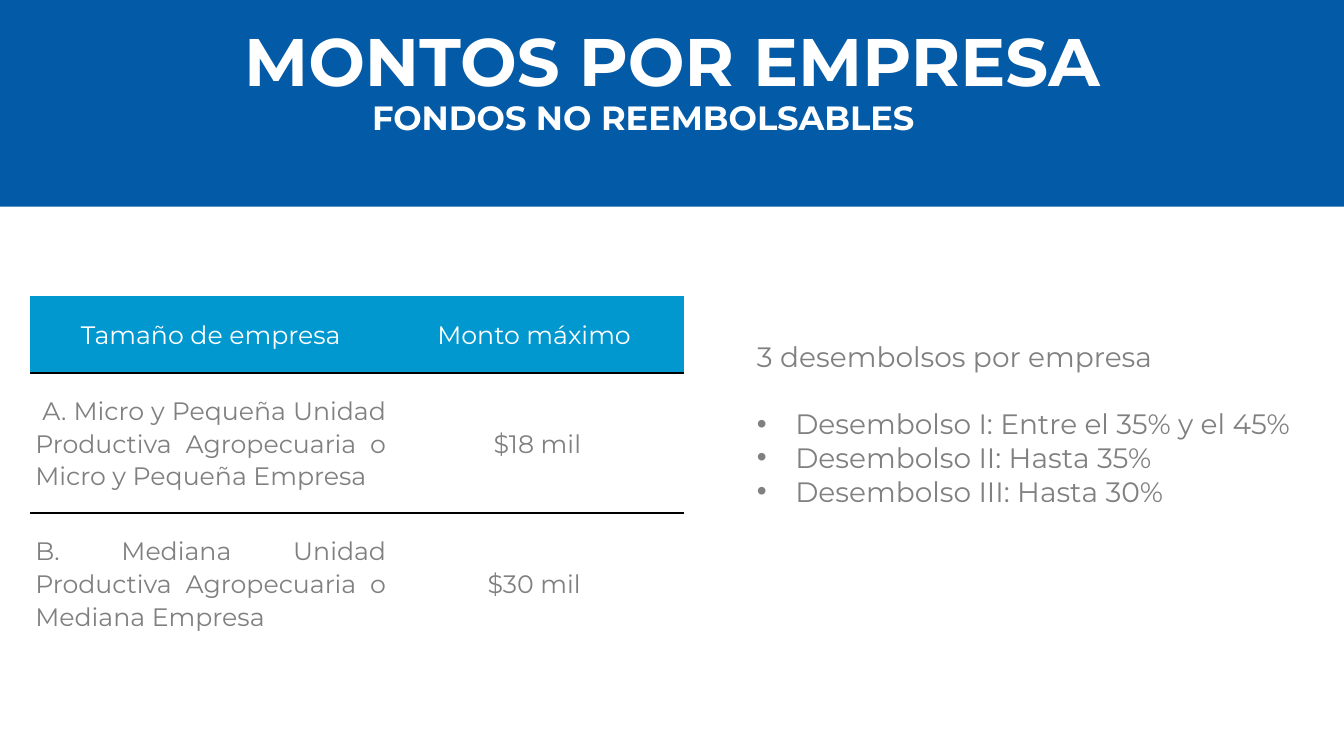
from lxml import etree
from pptx import Presentation
from pptx.dml.color import RGBColor
from pptx.enum.shapes import MSO_SHAPE
from pptx.enum.text import MSO_ANCHOR as ANCHOR, PP_ALIGN as ALIGN
from pptx.oxml.ns import qn
from pptx.util import Inches, Pt

# Content
TITLE = "MONTOS POR EMPRESA"
SUBTITLE = "FONDOS NO REEMBOLSABLES"
AMOUNTS = [
    ("Tamaño de empresa", "Monto máximo "),
    (" A. Micro y Pequeña Unidad Productiva Agropecuaria o Micro y Pequeña Empresa",
     "$18 mil"),
    ("B. Mediana Unidad Productiva Agropecuaria o Mediana Empresa", "$30 mil "),
]
PAYMENTS_HEAD = "3 desembolsos por empresa"
PAYMENTS = [
    "Desembolso I: Entre el 35% y el 45%",
    "Desembolso II: Hasta 35%",
    "Desembolso III: Hasta 30%",
]

# Style and grid
FONT = "Montserrat"
COLORS = {"band": "035AA6", "header": "0098CF", "white": "FFFFFF",
          "body": "808080", "rule": "000000"}
NO_GRID_STYLE = "{2D5ABB26-0587-4C30-8999-92F81FD0307C}"
SLIDE_W, SLIDE_H = 13.33, 7.5
COL_WIDTHS = [3.58, 2.9]
ROW_HEIGHTS = [0.76, 1.39, 1.39]


def color(name):
    return RGBColor.from_string(COLORS[name])


def format_text(p, size, color_name, bold=False, align=None, spacing=None):
    p.alignment = align
    p.line_spacing = spacing
    for r in p.runs:
        r.font.name, r.font.size, r.font.bold = FONT, Pt(size), bold
        r.font.color.rgb = color(color_name)


def add_text(left, top, width, height):
    tf = s.shapes.add_textbox(*map(Inches, (left, top, width, height))).text_frame
    tf.word_wrap = True
    return tf


def add_rules(cell, sides):
    tcPr = cell._tc.get_or_add_tcPr()
    for i, side in enumerate(sides):
        ln = etree.Element(qn(f"a:ln{side}"), w=str(Pt(1)))
        fill = etree.SubElement(ln, qn("a:solidFill"))
        etree.SubElement(fill, qn("a:srgbClr"), val=COLORS["rule"])
        tcPr.insert(i, ln)


def add_bullet(p, indent):
    pPr = p._p.get_or_add_pPr()
    pPr.set("marL", str(Inches(indent)))
    pPr.set("indent", str(-Inches(indent)))
    etree.SubElement(pPr, qn("a:buFont"), typeface="Arial")
    etree.SubElement(pPr, qn("a:buChar"), char="•")


prs = Presentation()
prs.slide_width, prs.slide_height = Inches(SLIDE_W), Inches(SLIDE_H)
s = prs.slides.add_slide(prs.slide_layouts[5])

# Header band, behind the title
band = s.shapes.add_shape(MSO_SHAPE.RECTANGLE, 0, 0, prs.slide_width, Inches(2.05))
band.shadow.inherit = False
band.fill.solid()
band.fill.fore_color.rgb = color("band")
band.line.fill.background()
s.shapes.title._element.addprevious(band._element)

# Title and subtitle
title = s.shapes.title
title.left, title.top = 0, Inches(0.22)
title.width, title.height = prs.slide_width, Inches(0.85)
tf = title.text_frame
tf.text = TITLE
tf.vertical_anchor = ANCHOR.MIDDLE
format_text(tf.paragraphs[0], 48, "white", True, ALIGN.CENTER, 0.9)

tf = add_text(0, 0.94, 12.76, 0.5)
tf.text = SUBTITLE
tf.vertical_anchor = ANCHOR.MIDDLE
format_text(tf.paragraphs[0], 24, "white", True, ALIGN.CENTER, 0.9)

# Amounts table
frame = s.shapes.add_table(len(AMOUNTS), len(COL_WIDTHS), Inches(0.3), Inches(2.94),
                           Inches(sum(COL_WIDTHS)), Inches(sum(ROW_HEIGHTS)))
table = frame.table
table.horz_banding = False
frame._element.find(".//" + qn("a:tableStyleId")).text = NO_GRID_STYLE
for col, width in zip(table.columns, COL_WIDTHS):
    col.width = Inches(width)
for i, (row, height) in enumerate(zip(table.rows, ROW_HEIGHTS)):
    row.height = Inches(height)
    for j, cell in enumerate(row.cells):
        cell.text = AMOUNTS[i][j]
        cell.vertical_anchor = ANCHOR.MIDDLE
        cell.margin_left = cell.margin_right = Inches(0.05)
        cell.margin_top = cell.margin_bottom = 0
        if i == 0:
            cell.fill.solid()
            cell.fill.fore_color.rgb = color("header")
        else:
            cell.fill.background()
        add_rules(cell, ["B", "TB", "T"][i])
        align = ALIGN.JUSTIFY if i and j == 0 else ALIGN.CENTER
        format_text(cell.text_frame.paragraphs[0], 18, "body" if i else "white",
                    align=align, spacing=1.07)

# Payments list
tf = add_text(7.41, 3.32, 5.77, 2.79)
tf.text = PAYMENTS_HEAD
tf.paragraphs[0].space_after = Pt(24)
for payment in PAYMENTS:
    p = tf.add_paragraph()
    p.text = payment
    add_bullet(p, 0.38)
for p in tf.paragraphs:
    format_text(p, 20, "body")

prs.save("out.pptx")
